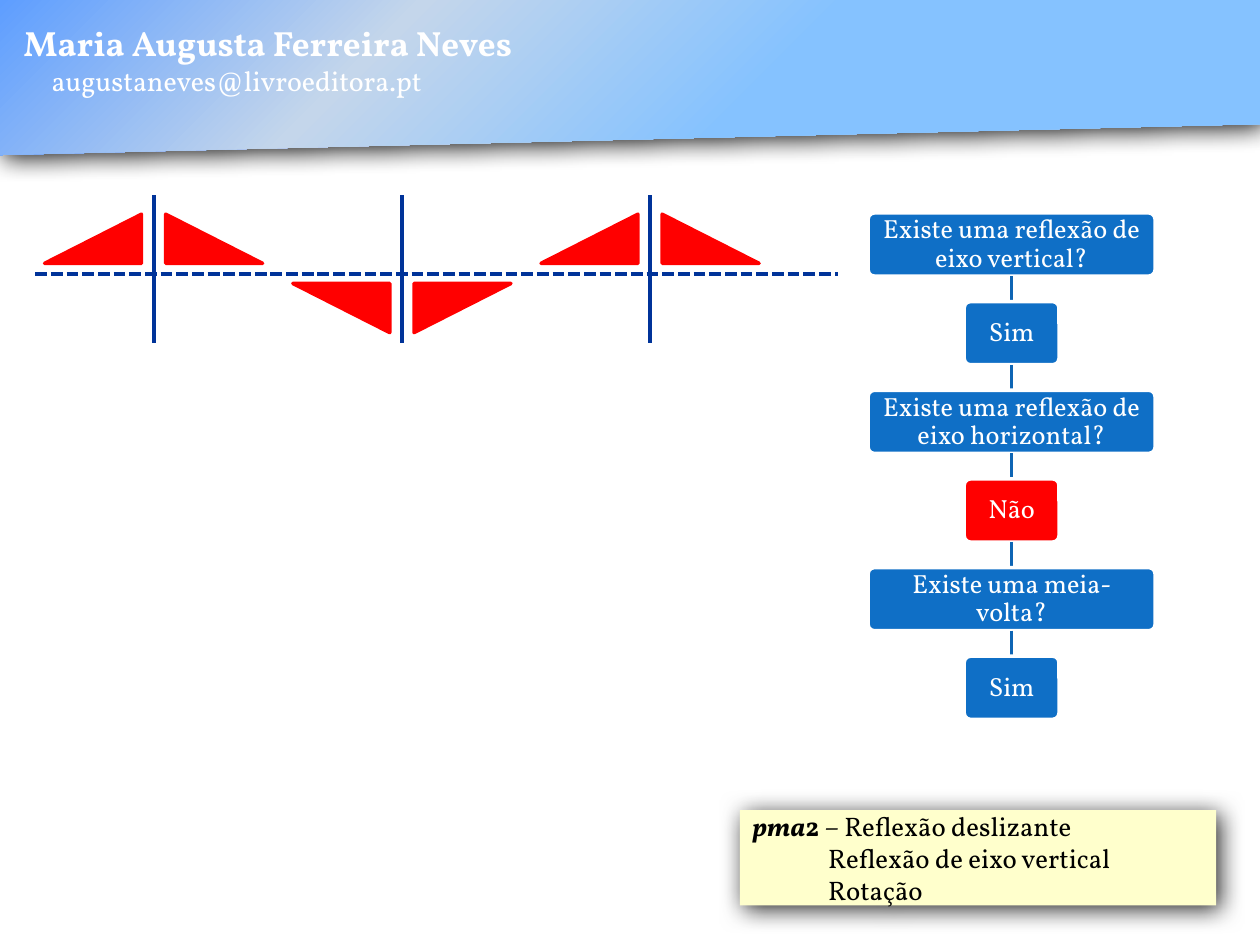
import pptx
import pptx.dml.color
import pptx.enum.dml
import pptx.enum.shapes
import pptx.enum.text
import pptx.oxml
import pptx.oxml.ns
import pptx.util

Pt = pptx.util.Pt
RGBColor = pptx.dml.color.RGBColor
SHAPE = pptx.enum.shapes.MSO_SHAPE
ANCHOR = pptx.enum.text.MSO_ANCHOR
ALIGN = pptx.enum.text.PP_ALIGN
qn = pptx.oxml.ns.qn

FONT = "Vollkorn"
WHITE = RGBColor(0xFF, 0xFF, 0xFF)
BLACK = RGBColor(0x00, 0x00, 0x00)
RED = RGBColor(0xFF, 0x00, 0x00)
NAVY = RGBColor(0x00, 0x33, 0x99)
BLUE = RGBColor(0x0F, 0x6F, 0xC6)
LINK_BLUE = RGBColor(0x0E, 0x65, 0xB4)
CREAM = RGBColor(0xFF, 0xFF, 0xCC)
SKY = RGBColor(0x85, 0xC2, 0xFF)
MIST = RGBColor(0xC4, 0xD6, 0xEB)
AZURE = RGBColor(0x5E, 0x9E, 0xFF)

HEADER_STOPS = [(40, SKY), (70, MIST), (100, AZURE)]
NAMESPACE = pptx.oxml.ns.nsdecls("a")

AXES = [(87.8, False), (229.7, True), (371.5, False)]
TRIANGLE_WIDTH, TRIANGLE_HEIGHT = 55.4, 28.1
TRIANGLE_GAP = 6.9

STEPS = [
    ("Existe uma reflexão de eixo vertical?", 164, BLUE),
    ("Sim", 54.2, BLUE),
    ("Existe uma reflexão de eixo horizontal?", 164, BLUE),
    ("Não", 54.2, RED),
    ("Existe uma meia-volta?", 164, BLUE),
    ("Sim", 54.2, BLUE),
]
FLOW_CENTER, FLOW_TOP = 578.1, 121.7
STEP_HEIGHT, STEP_PITCH = 36.1, 50.66


def add_box(page, kind, left, top, width, height, fill, line=None):
    box = page.shapes.add_shape(kind, Pt(left), Pt(top), Pt(width), Pt(height))
    box.shadow.inherit = False
    box.fill.solid()
    box.fill.fore_color.rgb = fill
    if line is None:
        box.line.fill.background()
    else:
        box.line.color.rgb = line
        box.line.width = Pt(2)
    return box


def add_line(page, start, end, color, width):
    line = page.shapes.add_connector(
        pptx.enum.shapes.MSO_CONNECTOR.STRAIGHT, *[Pt(value) for value in start + end])
    line.line.color.rgb = color
    line.line.width = Pt(width)
    line._element.spPr.append(pptx.oxml.parse_xml(f"<a:effectLst {NAMESPACE}/>"))
    return line


def cast_shadow(shape):
    effects = shape._element.spPr.find(qn("a:effectLst"))
    effects.append(pptx.oxml.parse_xml(
        f'<a:outerShdw {NAMESPACE} blurRad="{Pt(14)}" dist="{Pt(3)}" dir="2700000" '
        'algn="tl" rotWithShape="0"><a:srgbClr val="000000">'
        '<a:alpha val="84000"/></a:srgbClr></a:outerShdw>'))


def fill_radially(shape, stops):
    stop_xml = "".join(
        f'<a:gs pos="{position * 1000}"><a:srgbClr val="{color}"/></a:gs>'
        for position, color in stops)
    solid = shape._element.spPr.find(qn("a:solidFill"))
    solid.getparent().replace(solid, pptx.oxml.parse_xml(
        f'<a:gradFill {NAMESPACE}><a:gsLst>{stop_xml}</a:gsLst>'
        '<a:path path="circle"><a:fillToRect l="100000" t="100000"/></a:path></a:gradFill>'))


def style_span(span, size, color, bold=False, italic=False):
    font = span.font
    font.name, font.size, font.bold, font.italic = FONT, Pt(size), bold, italic
    font.color.rgb = color


def indent(para, distance):
    properties = para._p.get_or_add_pPr()
    properties.set("marL", str(Pt(distance)))
    properties.set("indent", "0")


def add_header(page):
    banner = add_box(page, SHAPE.FLOWCHART_MANUAL_INPUT, 0, 0, 720, 88.6, SKY)
    banner.rotation = 180
    fill_radially(banner, HEADER_STOPS)
    cast_shadow(banner)
    box = page.shapes.add_textbox(Pt(6.5), Pt(8.6), Pt(523.4), Pt(51.1))
    box.text_frame.word_wrap = True
    box.text_frame.text = "Maria Augusta Ferreira Neves\naugustaneves@livroeditora.pt"
    name, address = box.text_frame.paragraphs
    style_span(name.runs[0], 20, WHITE, bold=True)
    style_span(address.runs[0], 16, WHITE)
    indent(address, 16)


def add_triangle(page, left, top, mirrored, inverted):
    triangle = add_box(page, SHAPE.RIGHT_TRIANGLE, left, top,
                       TRIANGLE_WIDTH, TRIANGLE_HEIGHT, RED, RED)
    frame = triangle._element.spPr.xfrm
    if mirrored:
        frame.set("flipH", "1")
    if inverted:
        frame.set("flipV", "1")


def add_frieze(page):
    for axis, inverted in AXES:
        top = 162 if inverted else 122.4
        add_triangle(page, axis - TRIANGLE_GAP - TRIANGLE_WIDTH, top, True, inverted)
        add_triangle(page, axis + TRIANGLE_GAP, top, False, inverted)
        add_line(page, (axis, 111.6), (axis, 196.2), NAVY, 2.25)
    midline = add_line(page, (20.2, 156.6), (478.8, 156.6), NAVY, 2.25)
    midline.line.dash_style = pptx.enum.dml.MSO_LINE.SQUARE_DOT
    dash = midline._element.spPr.find(qn("a:ln")).find(qn("a:prstDash"))
    dash.set("val", "sysDash")


def add_step(page, text, top, width, fill):
    box = add_box(page, SHAPE.ROUNDED_RECTANGLE, FLOW_CENTER - width / 2, top,
                  width, STEP_HEIGHT, fill, WHITE)
    box.adjustments[0] = 0.1
    frame = box.text_frame
    frame.word_wrap = True
    frame.vertical_anchor = ANCHOR.MIDDLE
    frame.margin_left = frame.margin_right = Pt(4.3)
    frame.margin_top = frame.margin_bottom = Pt(4.3)
    frame.text = text
    para = frame.paragraphs[0]
    para.alignment = ALIGN.CENTER
    para.line_spacing = 0.9
    style_span(para.runs[0], 15, WHITE)
    return box


def add_flow(page):
    previous = None
    for index, (text, width, fill) in enumerate(STEPS):
        top = FLOW_TOP + index * STEP_PITCH
        if previous is not None:
            link = add_line(page, (FLOW_CENTER, top - STEP_PITCH + STEP_HEIGHT),
                            (FLOW_CENTER, top), LINK_BLUE, 2)
            link.begin_connect(previous, 2)
        box = add_step(page, text, top, width, fill)
        if previous is not None:
            link.end_connect(box, 0)
        previous = box


def add_answer(page):
    box = add_box(page, SHAPE.RECTANGLE, 422.8, 462.9, 272.2, 54.5, CREAM)
    cast_shadow(box)
    frame = box.text_frame
    frame.word_wrap = True
    frame.vertical_anchor = ANCHOR.MIDDLE
    frame.text = "pma\nReflexão de eixo vertical\nRotação"
    first, *others = frame.paragraphs
    style_span(first.runs[0], 15.3, BLACK, bold=True, italic=True)
    for text, bold in [("2", True), (" – Reflexão deslizante", False)]:
        span = first.add_run()
        span.text = text
        style_span(span, 15.3, BLACK, bold=bold)
    for para in others:
        indent(para, 43.4)
        style_span(para.runs[0], 15.3, BLACK)
    for para in frame.paragraphs:
        para.alignment = ALIGN.LEFT


def main():
    deck = pptx.Presentation()
    deck.slide_width, deck.slide_height = Pt(720), Pt(540)
    page = deck.slides.add_slide(deck.slide_layouts[6])
    add_header(page)
    add_frieze(page)
    add_flow(page)
    add_answer(page)
    deck.save("out.pptx")


if __name__ == "__main__":
    main()
